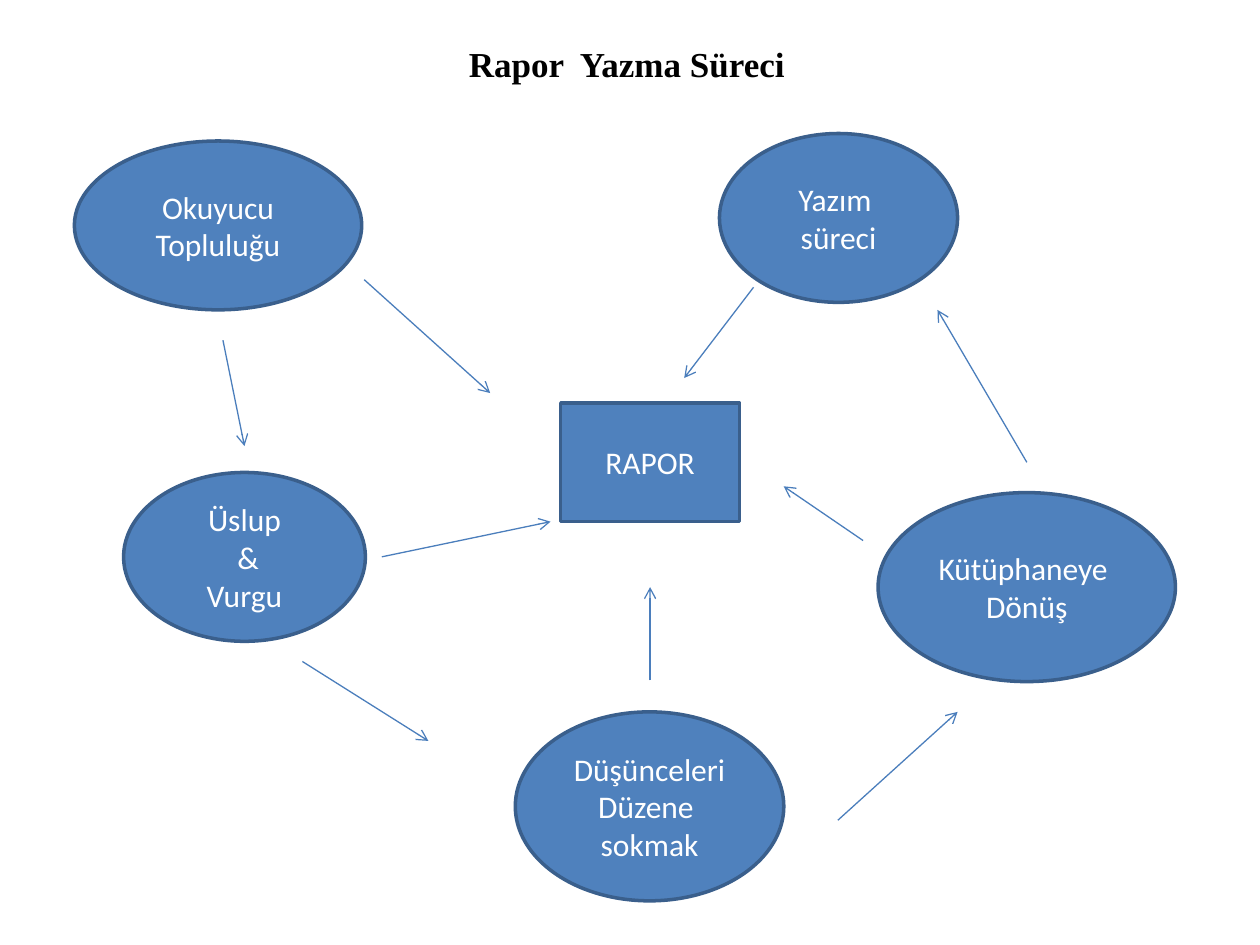
import pptx
import pptx.dml.color
import pptx.enum.shapes
import pptx.enum.text
import pptx.oxml
import pptx.oxml.ns
import pptx.util

Pt = pptx.util.Pt
RGB = pptx.dml.color.RGBColor.from_string
KIND = pptx.enum.shapes.MSO_SHAPE
ALIGN = pptx.enum.text.PP_ALIGN
ANCHOR = pptx.enum.text.MSO_ANCHOR

THEME = {
    "fill": RGB("4F81BD"),
    "edge": RGB("3A5F8C"),
    "arrow": RGB("4B7EBC"),
    "edge_width": Pt(2),
    "arrow_width": Pt(0.75),
    "title": {"name": "Times New Roman", "size": Pt(20), "bold": True},
    "title_ink": RGB("000000"),
    "label": {"name": "Calibri", "size": Pt(18)},
    "label_ink": RGB("FFFFFF"),
}


def write(frame, lines, role):
    """Fill a text frame with centred lines in the theme font of a role."""
    frame.text = "\n".join(lines)
    for para in frame.paragraphs:
        para.alignment = ALIGN.CENTER
        for run in para.runs:
            for key, value in THEME[role].items():
                setattr(run.font, key, value)
            run.font.color.rgb = THEME[role + "_ink"]


deck = pptx.Presentation()
deck.slide_width, deck.slide_height = Pt(720), Pt(540)
slide = deck.slides.add_slide(deck.slide_layouts[6])

# Title
box = slide.shapes.add_textbox(Pt(259.9), Pt(20.9), Pt(196.6), Pt(31.7))
box.text_frame.word_wrap = False
write(box.text_frame, ["Rapor  Yazma Süreci"], "title")

# Steps around the report: kind, left, top, width, height, lines
nodes = [
    (KIND.OVAL, 294.5, 406.8, 153.4, 108, ["Düşünceleri", "Düzene ", "sokmak"]),
    (KIND.OVAL, 501.8, 281.5, 169.9, 108, ["Kütüphaneye ", "Dönüş"]),
    (KIND.OVAL, 411.1, 76.3, 136.1, 96.5, ["Yazım ", "süreci"]),
    (KIND.OVAL, 70.6, 270, 138.2, 96.5, ["Üslup", " &", "Vurgu"]),
    (KIND.OVAL, 42.5, 80.6, 164.2, 96.5, ["Okuyucu Topluluğu"]),
    (KIND.RECTANGLE, 320.4, 230.4, 102.2, 67.7, ["RAPOR"]),
]
for kind, *place, lines in nodes:
    node = slide.shapes.add_shape(kind, *map(Pt, place))
    node.shadow.inherit = False
    node.fill.solid()
    node.fill.fore_color.rgb = THEME["fill"]
    node.line.color.rgb = THEME["edge"]
    node.line.width = THEME["edge_width"]
    node.text_frame.word_wrap = True
    node.text_frame.vertical_anchor = ANCHOR.MIDDLE
    write(node.text_frame, lines, "label")

# Arrows: start x, start y, end x, end y
arrows = [
    # From step to step
    (127.4, 194.4, 139.7, 254.9),
    (172.8, 378, 244.8, 423.4),
    (478.8, 468.7, 547.2, 406.8),
    (586.8, 264.2, 535.7, 177.1),
    # From each step to the report
    (430.6, 164.2, 391, 216),
    (208.1, 159.8, 280.1, 224.6),
    (218.2, 318.2, 314.6, 298.1),
    (371.5, 388.8, 371.5, 335.5),
    (493.2, 308.9, 447.8, 277.9),
]
for ends in arrows:
    arrow = slide.shapes.add_connector(
        pptx.enum.shapes.MSO_CONNECTOR.STRAIGHT, *map(Pt, ends))
    arrow.line.color.rgb = THEME["arrow"]
    arrow.line.width = THEME["arrow_width"]
    props = arrow._element.spPr
    head = pptx.oxml.ns.qn("a:tailEnd")
    arrow.line._ln.append(arrow.line._ln.makeelement(head, {"type": "arrow"}))
    props.append(props.makeelement(pptx.oxml.ns.qn("a:effectLst"), {}))

deck.save("out.pptx")
